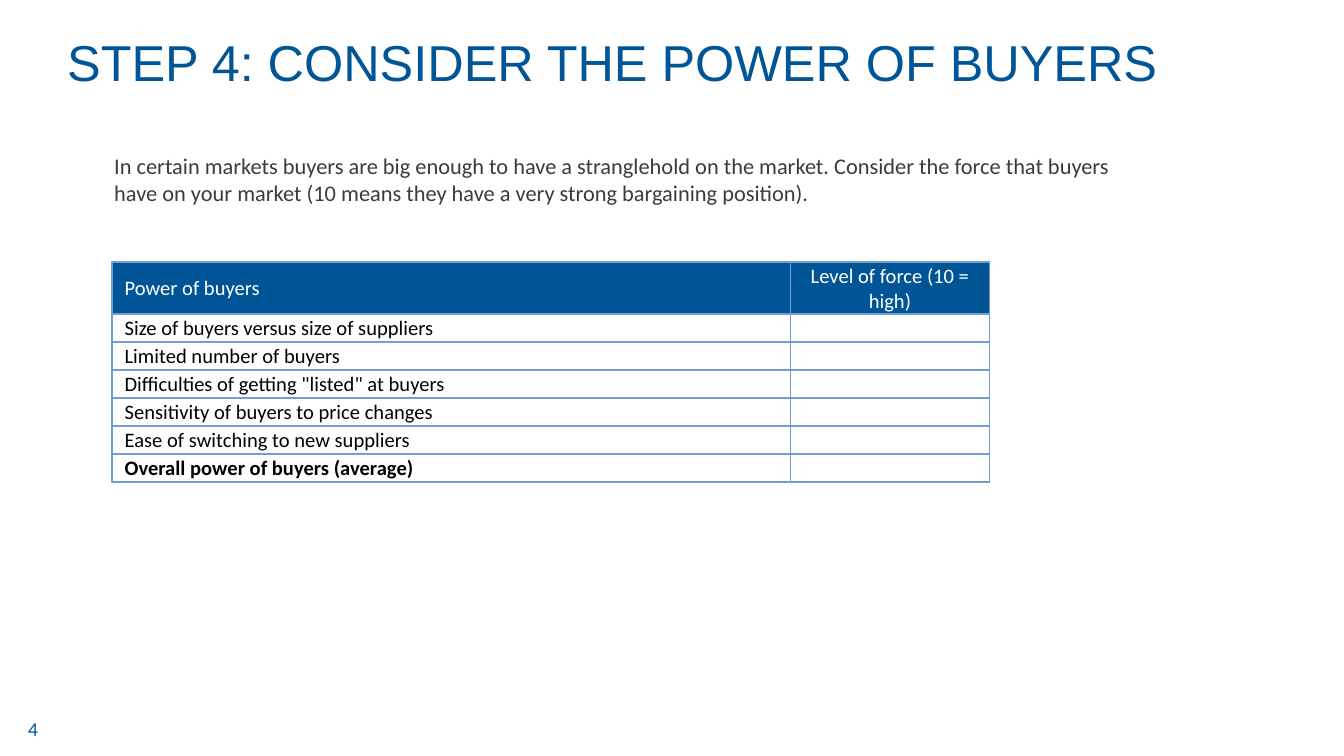
from dataclasses import dataclass

from lxml import etree
from pptx import Presentation
from pptx.dml.color import RGBColor
from pptx.enum import text as t
from pptx.oxml import ns
from pptx.util import Pt

BLUE, GREY, EDGE, BLACK, WHITE = "005596", "3B3B3B", "739DD2", "000000", "FFFFFF"
LEFT, MID = t.PP_ALIGN.LEFT, t.PP_ALIGN.CENTER


@dataclass
class Style:
    size: float
    color: str
    font: str = "Calibri"
    bold: bool = False
    align: t.PP_ALIGN = LEFT


@dataclass
class Row:
    label: str
    force: str = ""
    head: bool = False
    bold: bool = False


ROWS = [
    Row("Power of buyers", "Level of force (10 = high)", head=True),
    Row("Size of buyers versus size of suppliers"),
    Row("Limited number of buyers"),
    Row('Difficulties of getting "listed" at buyers'),
    Row("Sensitivity of buyers to price changes"),
    Row("Ease of switching to new suppliers"),
    Row("Overall power of buyers (average)", bold=True),
]


def rgb(code: str) -> RGBColor:
    return RGBColor.from_string(code)


def add(parent, tag: str, **attrs: str):
    return etree.SubElement(parent, ns.qn(tag), attrs)


def write(frame, words: str, style: Style) -> None:
    frame.text = words
    para = frame.paragraphs[0]
    para.alignment = style.align
    para.space_before = Pt(0)
    for run in para.runs:
        font = run.font
        font.name, font.size, font.bold = style.font, Pt(style.size), style.bold
        font.color.rgb = rgb(style.color)
    if not words:  # keeps an empty cell from growing
        add(para._p, "a:endParaRPr", sz=str(int(style.size * 100)))


def place(shape, left: float, top: float, width: float, height: float) -> None:
    shape.left, shape.top = Pt(left), Pt(top)
    shape.width, shape.height = Pt(width), Pt(height)


def setup(frame, inset: float | None = None) -> None:
    frame.word_wrap = True
    frame.auto_size = t.MSO_AUTO_SIZE.NONE
    frame.vertical_anchor = t.MSO_ANCHOR.TOP
    if inset is not None:
        frame.margin_left = frame.margin_right = Pt(inset)
        frame.margin_top = frame.margin_bottom = Pt(inset)


def edge(cell, color: str, width: float) -> None:
    props = cell._tc.get_or_add_tcPr()
    for spot, side in enumerate("LRTB"):
        line = add(props, f"a:ln{side}", w=str(Pt(width)))
        add(add(line, "a:solidFill"), "a:srgbClr", val=color)
        props.insert(spot, line)  # borders come before the fill


def fill_cell(cell, words: str, style: Style, head: bool, indent: float) -> None:
    cell.margin_left = cell.margin_right = cell.margin_top = Pt(0.75)
    cell.margin_bottom = Pt(0)
    cell.vertical_anchor = t.MSO_ANCHOR.MIDDLE
    write(cell.text_frame, words, style)
    if indent:
        props = cell.text_frame.paragraphs[0]._p.get_or_add_pPr()
        props.set("marL", str(Pt(indent)))
        props.set("indent", "0")
    if head:
        cell.fill.solid()
        cell.fill.fore_color.rgb = rgb(BLUE)
    else:
        cell.fill.background()
    edge(cell, EDGE, 1)


def draw_table(slide, rows: list[Row]) -> None:
    tall = [27 if row.head else 15 for row in rows]
    wide = [363.5, 106.5]
    grid = slide.shapes.add_table(len(rows), 2, Pt(60), Pt(140.4),
                                  Pt(sum(wide)), Pt(sum(tall))).table
    grid.horz_banding = False
    for col, width in zip(grid.columns, wide):
        col.width = Pt(width)
    for num, row in enumerate(rows):
        grid.rows[num].height = Pt(tall[num])
        color = WHITE if row.head else BLACK
        fill_cell(grid.cell(num, 0), row.label,
                  Style(11, color, bold=row.bold), row.head, 6)
        fill_cell(grid.cell(num, 1), row.force,
                  Style(11, color, align=MID), row.head, 0)
    grid.cell(0, 1).vertical_anchor = t.MSO_ANCHOR.BOTTOM


def main() -> None:
    deck = Presentation()
    deck.slide_width, deck.slide_height = Pt(720), Pt(405)
    slide = deck.slides.add_slide(deck.slide_layouts[1])

    # Title
    title = slide.shapes.title
    place(title, 36, 16.5, 648, 67.5)
    setup(title.text_frame, 0)
    write(title.text_frame, "STEP 4: CONSIDER THE POWER OF BUYERS",
          Style(27, BLUE, "Arial"))

    # Introduction, without a bullet
    intro = slide.placeholders[1]
    place(intro, 54, 77.8, 556, 36)
    setup(intro.text_frame)
    write(intro.text_frame,
          "In certain markets buyers are big enough to have a stranglehold on "
          "the market. Consider the force that buyers have on your market "
          "(10 means they have a very strong bargaining position).",
          Style(12, GREY))
    props = intro.text_frame.paragraphs[0]._p.get_or_add_pPr()
    props.set("marL", "0")
    props.set("indent", "0")
    add(props, "a:buNone")

    # Scores
    draw_table(slide, ROWS)

    # Page number
    page = slide.shapes.add_textbox(Pt(7), Pt(384), Pt(21.5), Pt(11))
    setup(page.text_frame, 0)
    write(page.text_frame, "4", Style(10.5, BLUE, align=MID))

    deck.save("out.pptx")


if __name__ == "__main__":
    main()
